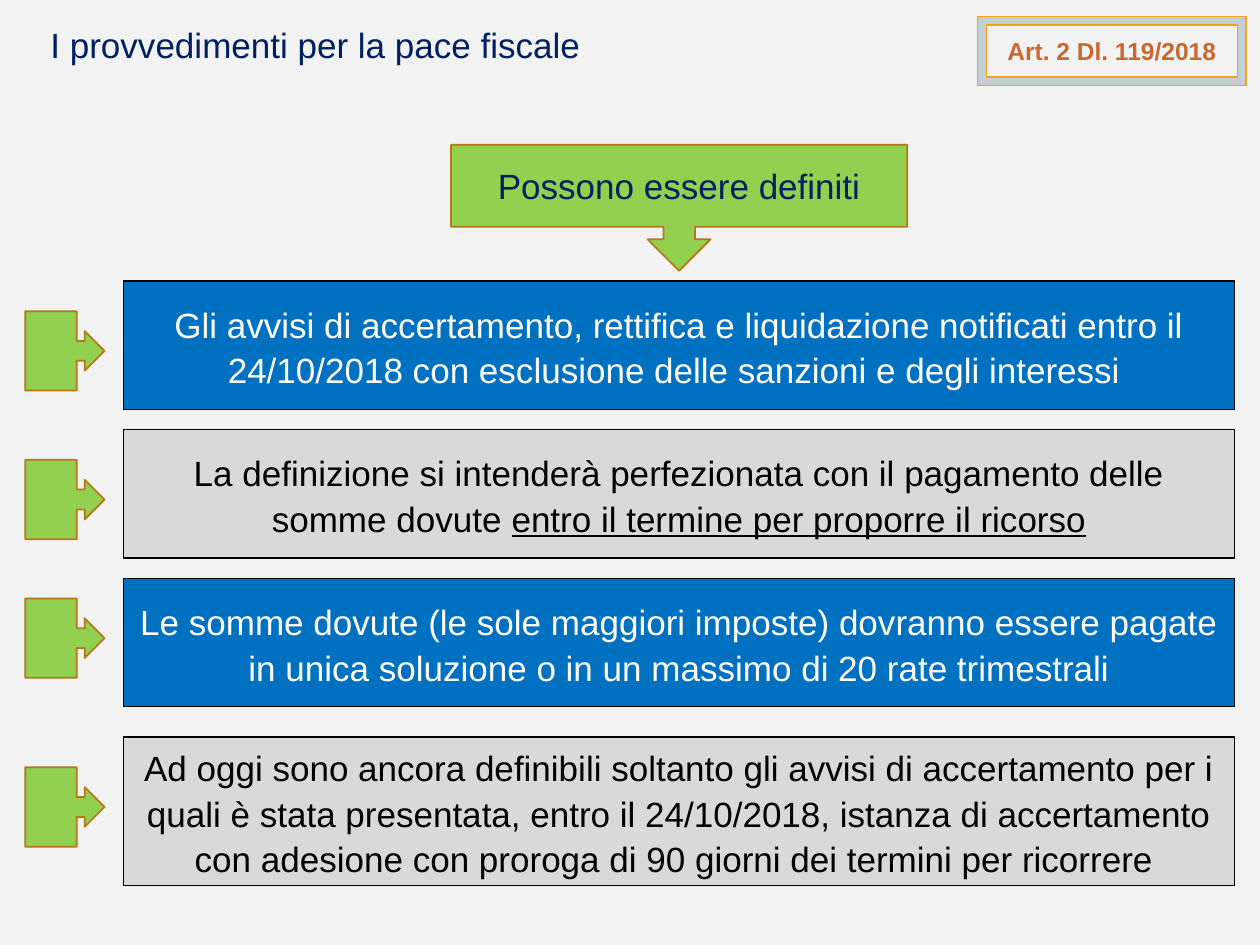
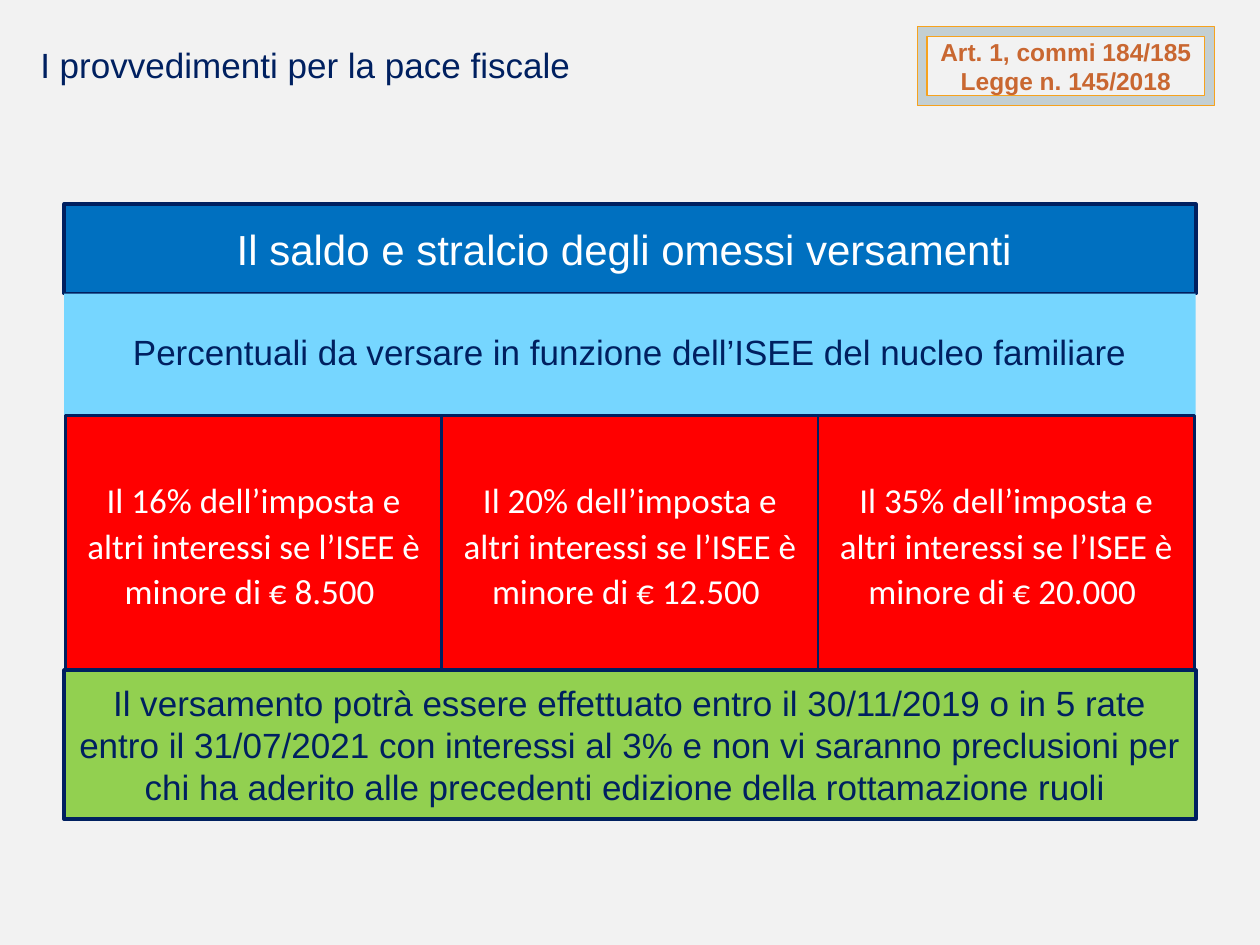
from pptx import Presentation
from pptx.dml.color import RGBColor
from pptx.enum.shapes import MSO_SHAPE as Shape
from pptx.enum.text import MSO_ANCHOR as Anchor, PP_ALIGN as Align
from pptx.util import Inches, Pt

COLORS = {
    "background": "F2F2F2", "navy": "002060", "blue": "0070C0", "sky": "76D6FF",
    "red": "FF0000", "green": "92D050", "grey": "D9D9D9", "white": "FFFFFF",
    "black": "000000", "brown": "B67815", "frame": "C3CFD3", "amber": "F6A21D",
    "rust": "C96731",
}
TITLE = "I provvedimenti per la pace fiscale"


def color(name):
    return RGBColor.from_string(COLORS[name])


def write(shape, text, ink, size=20, font="Arial", bold=False, underlined="",
          align=Align.CENTER, spacing=None, margins=(0.1, 0.05)):
    """Fill a shape with one paragraph; the underlined part follows the text."""
    frame = shape.text_frame
    frame.word_wrap = True
    frame.vertical_anchor = Anchor.MIDDLE
    frame.margin_left = frame.margin_right = Inches(margins[0])
    frame.margin_top = frame.margin_bottom = Inches(margins[1])
    frame.text = text
    paragraph = frame.paragraphs[0]
    paragraph.alignment = align
    if spacing:
        paragraph.line_spacing = spacing
    if underlined:
        run = paragraph.add_run()
        run.text = underlined
        run.font.underline = True
    for run in paragraph.runs:
        run.font.name = font
        run.font.size = Pt(size)
        run.font.bold = bold
        run.font.color.rgb = color(ink)


def add_box(slide, box, fill, line=None, width=1, kind=Shape.RECTANGLE):
    shape = slide.shapes.add_shape(kind, *map(Inches, box))
    shape.shadow.inherit = False
    shape.fill.solid()
    shape.fill.fore_color.rgb = color(fill)
    if line:
        shape.line.color.rgb = color(line)
        shape.line.width = Pt(width)
    else:
        shape.line.fill.background()
    return shape


def add_slide(presentation, title_at, reference, reference_box):
    """Add a slide with its background, title and framed law reference."""
    slide = presentation.slides.add_slide(presentation.slide_layouts[6])
    slide.background.fill.solid()
    slide.background.fill.fore_color.rgb = color("background")
    title = slide.shapes.add_textbox(*map(Inches, (*title_at, 6.22, 0.45)))
    write(title, TITLE, "navy", align=Align.JUSTIFY, margins=(0.12, 0.06))
    badge = add_box(slide, reference_box, "frame", "amber", 0.75, Shape.FRAME)
    write(badge, reference, "rust", size=14, bold=True)
    return slide


def add_rule(slide, box, arrow_offset, fill, ink, text, underlined=""):
    """Add a bordered rule with a callout arrow pointing at it from the left."""
    left, top, _, _ = box
    rule = add_box(slide, box, fill, "black", 0.75)
    write(rule, text, ink, underlined=underlined, spacing=Pt(26))
    add_box(slide, (left - 0.78, top + arrow_offset, 0.63, 0.63), "green", "brown",
            kind=Shape.RIGHT_ARROW_CALLOUT)


def build_assessments(presentation):
    slide = add_slide(presentation, (0.28, 0.13), "Art. 2 Dl. 119/2018",
                      (7.76, 0.13, 2.13, 0.55))
    heading = add_box(slide, (3.58, 1.15, 3.62, 1), "green", "brown",
                      kind=Shape.DOWN_ARROW_CALLOUT)
    write(heading, "Possono essere definiti", "navy")

    rules = [
        (2.23, 1.02, 0.24, "Gli avvisi di accertamento, rettifica e liquidazione notificati "
         "entro il 24/10/2018 con esclusione delle sanzioni e degli interessi ", ""),
        (3.41, 1.02, 0.24, "La definizione si intenderà perfezionata con il pagamento delle "
         "somme dovute ", "entro il termine per proporre il ricorso"),
        (4.59, 1.02, 0.16, "Le somme dovute (le sole maggiori imposte) dovranno essere pagate "
         "in unica soluzione o in un massimo di 20 rate trimestrali", ""),
        (5.85, 1.18, 0.24, "Ad oggi sono ancora definibili soltanto gli avvisi di accertamento "
         "per i quali è stata presentata, entro il 24/10/2018, istanza di accertamento con "
         "adesione con proroga di 90 giorni dei termini per ricorrere ", ""),
    ]
    styles = [("blue", "white"), ("grey", "black")]
    for index, (top, height, arrow_offset, text, underlined) in enumerate(rules):
        add_rule(slide, (0.98, top, 8.82, height), arrow_offset, *styles[index % 2],
                 text, underlined)


def add_brackets(slide, box, brackets):
    """Split the box into equal columns, one for each income bracket."""
    left, top, width, height = box
    column = width / len(brackets)
    for index, (share, limit) in enumerate(brackets):
        cell = add_box(slide, (left + index * column, top, column, height),
                       "red", "navy", 1.5)
        write(cell, f"Il {share}% dell’imposta e altri interessi se l’ISEE è "
              f"minore di € {limit} ", "white", font="Calibri", spacing=Pt(26),
              margins=(0.08, 0.08))


def build_settlement(presentation):
    slide = add_slide(presentation, (0.2, 0.29), "Art. 1, commi 184/185 Legge n. 145/2018",
                      (7.28, 0.21, 2.36, 0.63))
    left, width = 0.51, 8.98
    header = add_box(slide, (left, 1.62, width, 0.71), "blue", "navy", 2.25)
    write(header, "Il saldo e stralcio degli omessi versamenti ", "white", size=24)

    subtitle = add_box(slide, (left, 2.33, width, 0.97), "sky")
    write(subtitle, "Percentuali da versare in funzione dell’ISEE del nucleo familiare",
          "navy", spacing=0.9, margins=(0.08, 0.08))

    add_brackets(slide, (left + 0.01, 3.3, width - 0.02, 2.03),
                 [(16, "8.500"), (20, "12.500"), (35, "20.000")])

    payment = add_box(slide, (left, 5.32, width, 1.18), "green", "navy", 2.25)
    write(payment, "Il versamento potrà essere effettuato entro il 30/11/2019 o in 5 rate "
          "entro il 31/07/2021 con interessi al 3% e non vi saranno preclusioni per chi ha "
          "aderito alle precedenti edizione della rottamazione ruoli ", "navy")


def main():
    presentation = Presentation()
    presentation.slide_width = Inches(10)
    presentation.slide_height = Inches(7.5)
    build_assessments(presentation)
    build_settlement(presentation)
    presentation.save("out.pptx")


if __name__ == "__main__":
    main()
